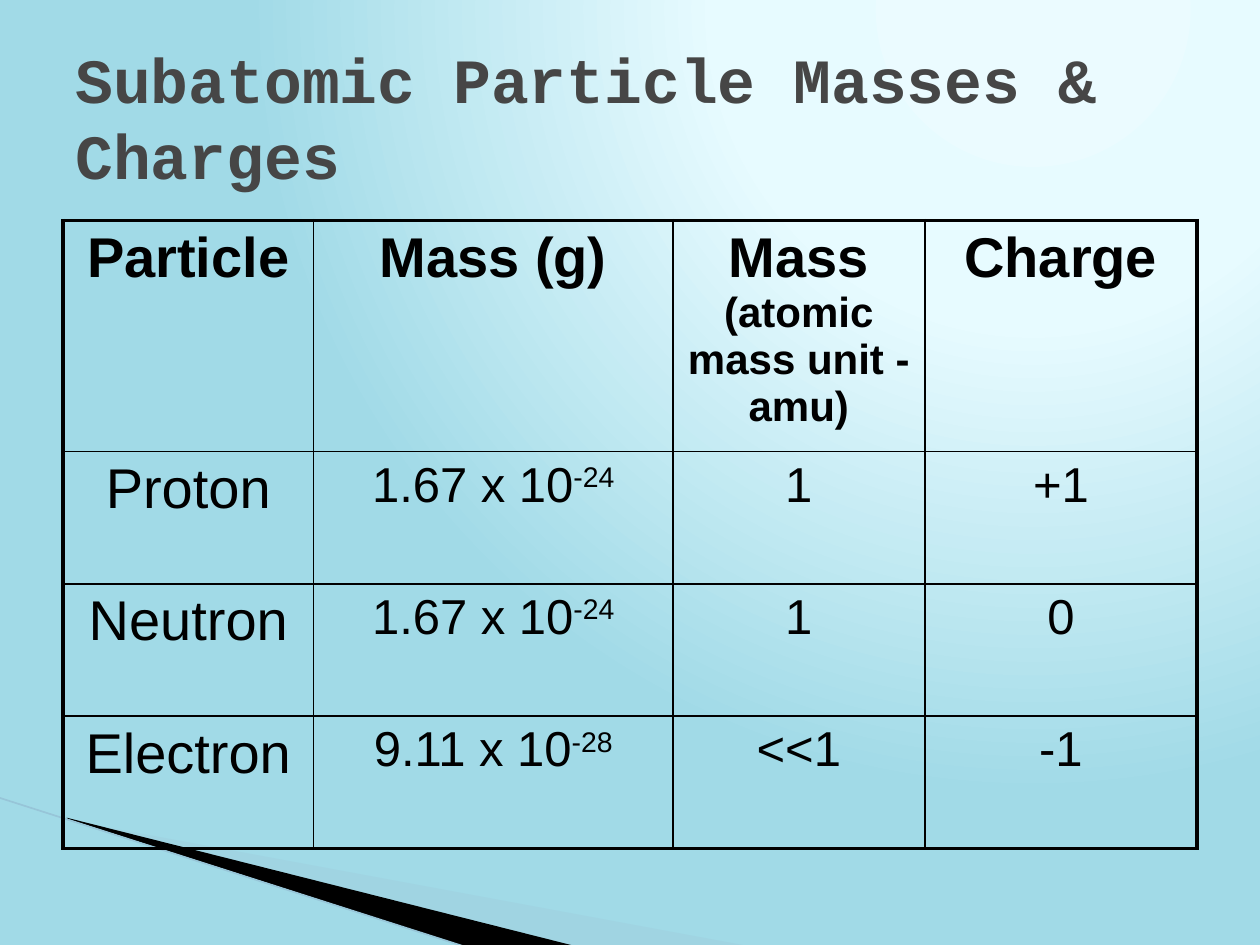
from typing import NamedTuple

from lxml.etree import SubElement, fromstring
from pptx import Presentation
from pptx.dml.color import RGBColor
from pptx.enum.shapes import MSO_CONNECTOR as Conn
from pptx.enum.text import MSO_ANCHOR as Anchor, PP_ALIGN as Align
from pptx.oxml.ns import nsdecls, qn
from pptx.util import Inches, Pt

BLACK = RGBColor(0x00, 0x00, 0x00)
TITLE_GRAY = RGBColor(0x46, 0x46, 0x46)
SWOOSH_BLUE = RGBColor(0xA0, 0xCB, 0xDC)
EDGE_BLUE = RGBColor(0x97, 0xC5, 0xD8)
GLOW = [(0, RGBColor(0xEB, 0xFB, 0xFF)), (40, RGBColor(0xE7, 0xFB, 0xFF)),
        (100, RGBColor(0xA1, 0xDA, 0xE7))]

# The slide is a grid of 200 columns by 150 rows
COLS, ROWS = 200, 150
UNIT = 0.05


class Run(NamedTuple):
    text: str
    size: float
    bold: bool = False
    superscript: bool = False


class Wedge(NamedTuple):
    points: list
    color: RGBColor
    opacity: int = 100


def grid(n: float) -> int:
    """Length of n grid columns or rows."""
    return Inches(n * UNIT)


def add_run(p, run: Run, font: str, color: RGBColor) -> None:
    r = p.add_run()
    r.text = run.text
    r.font.name, r.font.size, r.font.bold = font, Pt(run.size), run.bold
    r.font.color.rgb = color
    if run.superscript:
        r.font._element.set("baseline", "30000")


def set_background(slide, stops: list) -> None:
    fill = slide.background.fill
    fill.solid()
    solid = slide._element.find(".//" + qn("a:solidFill"))
    gs = "".join(f'<a:gs pos="{pos * 1000}"><a:srgbClr val="{color}"/></a:gs>'
                 for pos, color in stops)
    grad = fromstring(
        f'<a:gradFill {nsdecls("a")} rotWithShape="1"><a:gsLst>{gs}</a:gsLst>'
        '<a:path path="circle"><a:fillToRect l="65000" t="0" r="0" b="98000"/>'
        '</a:path></a:gradFill>')
    solid.getparent().replace(solid, grad)


def add_wedge(slide, wedge: Wedge) -> None:
    start, *rest = [(grid(x), grid(y)) for x, y in wedge.points]
    builder = slide.shapes.build_freeform(*start)
    builder.add_line_segments(rest, close=True)
    sp = builder.convert_to_shape()
    sp.shadow.inherit = False
    sp.line.fill.background()
    sp.fill.solid()
    sp.fill.fore_color.rgb = wedge.color
    if wedge.opacity < 100:
        clr = sp._element.spPr.find(".//" + qn("a:srgbClr"))
        SubElement(clr, qn("a:alpha"), val=str(wedge.opacity * 1000))


def set_borders(cell, widths: dict) -> None:
    tc_pr = cell._tc.get_or_add_tcPr()
    for i, (side, width) in enumerate(widths.items()):
        tc_pr.insert(i, fromstring(
            f'<a:ln{side} {nsdecls("a")} w="{Pt(width)}"><a:solidFill>'
            f'<a:srgbClr val="{BLACK}"/></a:solidFill></a:ln{side}>'))


def add_particle_table(slide, rows: list, widths: list, heights: list) -> None:
    n_rows, n_cols = len(heights), len(widths)
    frame = slide.shapes.add_table(n_rows, n_cols, grid(10), grid(35),
                                   grid(sum(widths)), grid(sum(heights)))
    table = frame.table
    table.first_row = table.horz_banding = False
    for col, width in zip(table.columns, widths):
        col.width = grid(width)
    for row, height in zip(table.rows, heights):
        row.height = grid(height)
    for i, row in enumerate(rows):
        for j, runs in enumerate(row):
            cell = table.cell(i, j)
            cell.fill.background()
            p = cell.text_frame.paragraphs[0]
            p.alignment = Align.CENTER
            for run in runs:
                add_run(p, run, "Arial", BLACK)
            # Thick frame outside, thin rules inside
            outer = {"L": j == 0, "R": j == n_cols - 1,
                     "T": i == 0, "B": i == n_rows - 1}
            set_borders(cell, {s: 2.25 if o else 1 for s, o in outer.items()})


def particle_row(name: str, mass: str, power: str, amu: str, charge: str) -> list:
    return [[Run(name, 32)],
            [Run(mass, 28), Run(power, 28, superscript=True)],
            [Run(amu, 28)], [Run(charge, 28)]]


WEDGES = [
    Wedge([(11, 130.2), (119, 150.2), (91.2, 150.2), (11, 130)], SWOOSH_BLUE, 40),
    Wedge([(10.6, 129.8), (91.4, 150.2), (74.4, 150.4), (10.8, 130)], BLACK),
]
TABLE_ROWS = [
    [[Run("Particle", 32, True)], [Run("Mass (g)", 32, True)],
     [Run("Mass ", 32, True), Run("(atomic mass unit - amu)", 24, True)],
     [Run("Charge", 32, True)]],
    particle_row("Proton", "1.67 x 10", "-24", "1", "+1"),
    particle_row("Neutron", "1.67 x 10", "-24", "1", "0"),
    particle_row("Electron", "9.11 x 10", "-28", "<<1", "-1"),
]


def main() -> None:
    prs = Presentation()
    prs.slide_width, prs.slide_height = grid(COLS), grid(ROWS)
    slide = prs.slides.add_slide(prs.slide_layouts[6])

    # Background and corner swoosh
    set_background(slide, GLOW)
    for wedge in WEDGES:
        add_wedge(slide, wedge)
    edge = slide.shapes.add_connector(Conn.STRAIGHT, grid(-0.2), grid(126.6),
                                      grid(74.2), grid(150.4))
    edge.line.color.rgb, edge.line.width = EDGE_BLUE, Pt(0.95)
    SubElement(edge._element.spPr, qn("a:effectLst"))

    # Title
    box = slide.shapes.add_textbox(grid(10), grid(6), grid(180), grid(25))
    tf = box.text_frame
    tf.word_wrap, tf.vertical_anchor = True, Anchor.MIDDLE
    add_run(tf.paragraphs[0], Run("Subatomic Particle Masses & Charges", 36, True),
            "Courier New", TITLE_GRAY)

    # Particle table
    add_particle_table(slide, TABLE_ROWS, [39.8, 57, 40, 43.2], [36.6, 21, 21, 21])

    prs.save("out.pptx")


if __name__ == "__main__":
    main()
